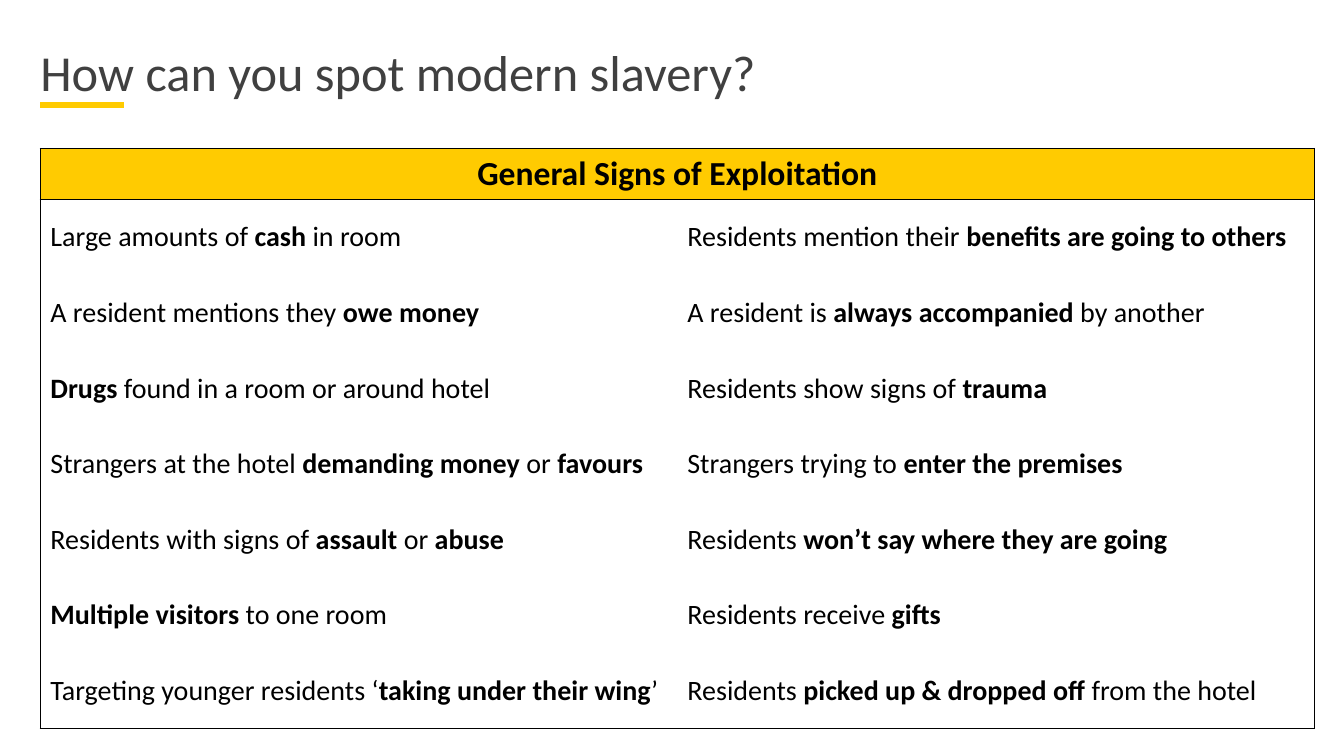
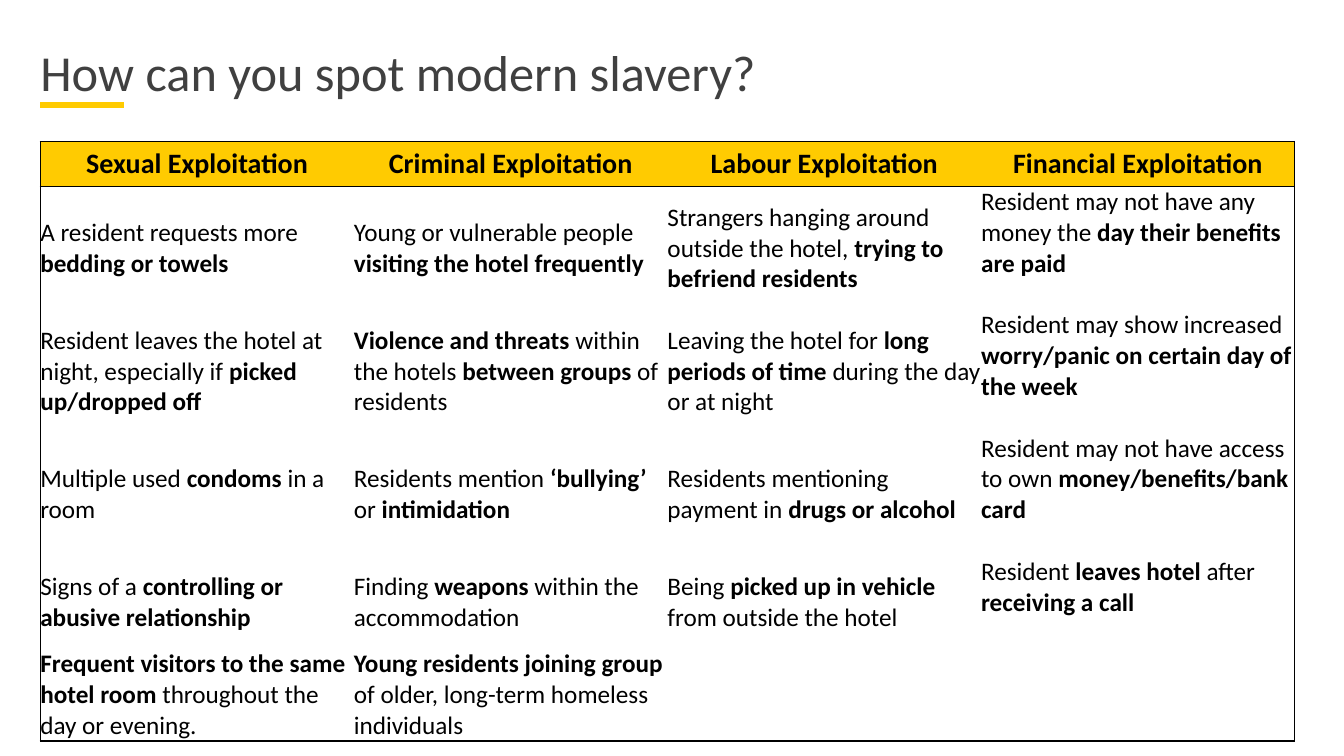
from dataclasses import dataclass

from lxml.etree import SubElement
from pptx import Presentation
from pptx.dml.color import RGBColor
from pptx.enum.shapes import MSO_CONNECTOR
from pptx.enum.text import MSO_ANCHOR, MSO_AUTO_SIZE, PP_ALIGN
from pptx.oxml import parse_xml
from pptx.oxml.ns import nsdecls, qn
from pptx.util import Pt


@dataclass(frozen=True)
class Theme:
    font: str = "Calibri"
    yellow: RGBColor = RGBColor(0xFF, 0xCB, 0x01)
    white: RGBColor = RGBColor(0xFF, 0xFF, 0xFF)
    black: RGBColor = RGBColor(0x00, 0x00, 0x00)
    grey: RGBColor = RGBColor(0x40, 0x40, 0x40)
    title_size: int = 36
    left: float = 28.8


theme = Theme()


def write_text(frame, text, size, color=theme.black, align=PP_ALIGN.LEFT, spacing=None):
    """Write one paragraph; parts between ** marks are bold."""
    paragraph = frame.paragraphs[0]
    paragraph.alignment = align
    paragraph.line_spacing = spacing
    for index, part in enumerate(text.split("**")):
        if part:
            run = paragraph.add_run()
            run.text = part
            run.font.name = theme.font
            run.font.size = Pt(size)
            run.font.color.rgb = color
            run.font.bold = index % 2 == 1


def set_borders(cell, **sides):
    """Draw a thin black line on the sides that are true, none on the others."""
    properties = cell._tc.get_or_add_tcPr()
    for index, (side, shown) in enumerate(sides.items()):
        paint = f'<a:solidFill><a:srgbClr val="{theme.black}"/></a:solidFill>' if shown else "<a:noFill/>"
        line = parse_xml(f'<a:ln{side} {nsdecls("a")} w="{Pt(1)}">{paint}</a:ln{side}>')
        properties.insert(index, line)


# Content: header row first, then the signs row by row
general_signs = [
    ["**General Signs of Exploitation**", ""],
    ["Large amounts of **cash** in room",
     "Residents mention their **benefits are going to others**"],
    ["A resident mentions they **owe money**",
     "A resident is **always accompanied **by another"],
    ["**Drugs** found in a room or around hotel",
     "Residents show signs of **trauma**"],
    ["Strangers at the hotel **demanding money** or **favours**",
     "Strangers trying to **enter the premises**"],
    ["Residents with signs of **assault** or **abuse**",
     "Residents **won’t say where they are going**"],
    ["**Multiple visitors **to one room",
     "Residents receive **gifts**"],
    ["Targeting younger residents ‘**taking under their wing**’",
     "Residents **picked up & dropped off **from the hotel"],
]
signs_by_type = [
    ["**Sexual Exploitation**", "**Criminal Exploitation**",
     "**Labour Exploitation**", "**Financial Exploitation**"],
    ["A resident requests more **bedding or towels**",
     "Young or vulnerable people **visiting the hotel frequently**",
     "Strangers hanging around outside the hotel, **trying to befriend residents**",
     "Resident may not have any money the **day their benefits are paid**"],
    ["Resident leaves the hotel at night, especially if **picked up/dropped off**",
     "**Violence and threats** within the hotels **between groups** of residents",
     "Leaving the hotel for** long periods of time **during the day or at night",
     "Resident may show increased** worry/panic on certain day of the week**"],
    ["Multiple used **condoms **in a room",
     "Residents mention **‘bullying’** or **intimidation**",
     "Residents mentioning payment in **drugs or alcohol**",
     "Resident may not have access to own **money/benefits/bank card**"],
    ["Signs of a **controlling or abusive relationship**",
     "Finding **weapons **within the accommodation",
     "Being **picked up in vehicle** from outside the hotel",
     "Resident **leaves hotel** after **receiving a call**"],
    ["**Frequent visitors to the same hotel room **throughout the day or evening.",
     "**Young residents joining group** of older, long-term homeless individuals",
     "", ""],
]

# Table settings for each slide
slides = [
    dict(rows=general_signs, top=106, column_width=455, heights=[36] + [54] * 7,
         header_size=24, body_size=20, margin=None, merged_header=True, top_columns=[]),
    dict(rows=signs_by_type, top=101, column_width=224, heights=[32.4] + [88] * 3 + [66] * 2,
         header_size=20, body_size=18, margin=0, merged_header=False, top_columns=[3]),
]

presentation = Presentation()
presentation.slide_width, presentation.slide_height = Pt(960), Pt(540)

for settings in slides:
    slide = presentation.slides.add_slide(presentation.slide_layouts[5])

    # Title
    title = slide.shapes.title
    title.left, title.top = Pt(theme.left), Pt(35.3)
    title.width, title.height = Pt(626.4), Pt(39.6)
    frame = title.text_frame
    frame.auto_size = MSO_AUTO_SIZE.NONE
    frame.vertical_anchor = MSO_ANCHOR.MIDDLE
    frame.margin_left = frame.margin_right = frame.margin_top = frame.margin_bottom = 0
    write_text(frame, "How can you spot modern slavery?", size=theme.title_size,
               color=theme.grey, spacing=0.8)

    # Accent line under the title
    accent = slide.shapes.add_connector(
        MSO_CONNECTOR.STRAIGHT, Pt(theme.left), Pt(75), Pt(theme.left + 60), Pt(75))
    accent.line.color.rgb = theme.yellow
    accent.line.width = Pt(4.5)
    SubElement(accent._element.spPr, qn("a:effectLst"))

    # Table frame
    rows, heights = settings["rows"], settings["heights"]
    column_count = len(rows[0])
    table = slide.shapes.add_table(
        len(rows), column_count, Pt(theme.left), Pt(settings["top"]),
        Pt(settings["column_width"] * column_count), Pt(sum(heights))).table
    table.first_row = table.horz_banding = False
    for column in table.columns:
        column.width = Pt(settings["column_width"])
    for row, height in zip(table.rows, heights):
        row.height = Pt(height)
    if settings["merged_header"]:
        table.cell(0, 0).merge(table.cell(0, column_count - 1))

    # Table cells
    for row_index, texts in enumerate(rows):
        is_header = row_index == 0
        for column_index, text in enumerate(texts):
            cell = table.cell(row_index, column_index)
            cell.fill.solid()
            cell.fill.fore_color.rgb = theme.yellow if is_header else theme.white
            is_top = not is_header and column_index in settings["top_columns"]
            cell.vertical_anchor = MSO_ANCHOR.TOP if is_top else MSO_ANCHOR.MIDDLE
            if settings["margin"] is not None:
                margin = Pt(settings["margin"])
                cell.margin_left = cell.margin_right = margin
                cell.margin_top = cell.margin_bottom = margin
            set_borders(cell,
                        L=column_index == 0,
                        R=column_index + cell.span_width == column_count or column_index == column_count - 1,
                        T=row_index <= 1,
                        B=is_header or row_index == len(rows) - 1)
            write_text(cell.text_frame, text,
                       size=settings["header_size" if is_header else "body_size"],
                       align=PP_ALIGN.CENTER if is_header else PP_ALIGN.LEFT)

presentation.save("out.pptx")
